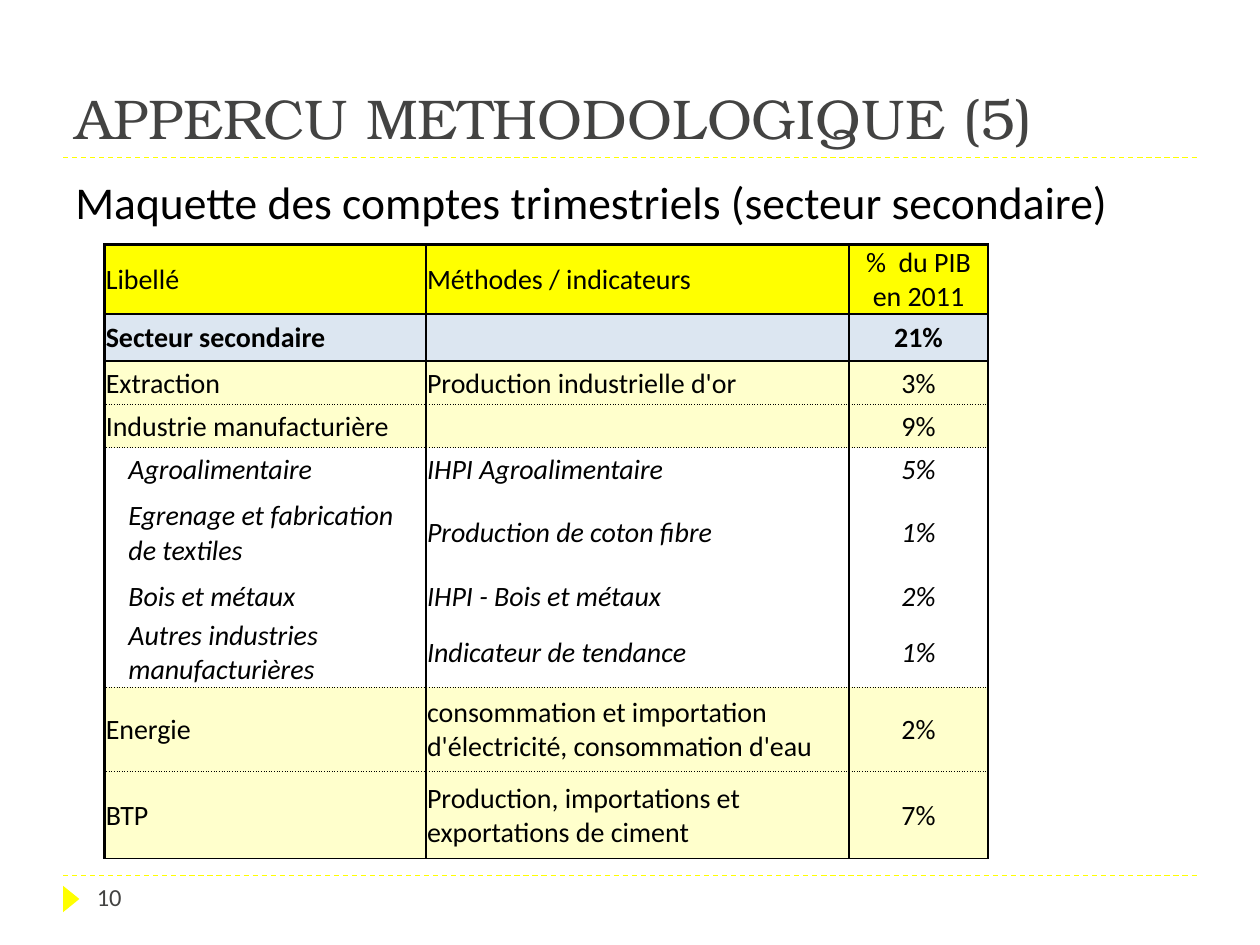
"""Build the slide on the quarterly accounts model of the secondary sector."""
from lxml import etree
from pptx import Presentation
from pptx.dml.color import RGBColor
from pptx.enum.dml import MSO_LINE
from pptx.enum.shapes import MSO_CONNECTOR, MSO_SHAPE
from pptx.enum.text import MSO_ANCHOR, MSO_AUTO_SIZE, PP_ALIGN
from pptx.oxml.ns import qn
from pptx.util import Inches, Pt

DASH = MSO_LINE.DASH
LINE = MSO_CONNECTOR.STRAIGHT
ARROW = MSO_SHAPE.ISOSCELES_TRIANGLE
TOP, MID, LOW = MSO_ANCHOR.TOP, MSO_ANCHOR.MIDDLE, MSO_ANCHOR.BOTTOM
FIXED = MSO_AUTO_SIZE.NONE
LEFT, MIDST = PP_ALIGN.LEFT, PP_ALIGN.CENTER
BLACK = RGBColor(0x00, 0x00, 0x00)
GREY = RGBColor(0x43, 0x43, 0x42)
GOLD = RGBColor(0xFF, 0xFF, 0x00)
CREAM = RGBColor(0xFF, 0xFF, 0xCC)
BLUE = RGBColor(0xDC, 0xE6, 0xF1)

deck = Presentation()
deck.slide_width, deck.slide_height = Inches(10), Inches(7.5)
COL, ROW = deck.slide_width / 100, deck.slide_height / 75
slide = deck.slides.add_slide(deck.slide_layouts[5])
shapes = slide.shapes


def write(part, text, align, **form):
    para = part.paragraphs[0]
    para.alignment = align
    run = para.add_run()
    run.text = text
    run.font.color.rgb = form.pop("color", BLACK)
    for key, value in form.items():
        setattr(run.font, key, value)


def edge(cell, spot, side, width, dash):
    line = etree.Element(qn("a:ln" + side), w=str(Pt(width)))
    if width:
        fill = etree.SubElement(line, qn("a:solidFill"))
        etree.SubElement(fill, qn("a:srgbClr"), val=str(BLACK))
        etree.SubElement(line, qn("a:prstDash"), val=dash)
    else:
        etree.SubElement(line, qn("a:noFill"))
    cell._tc.get_or_add_tcPr().insert(spot, line)


for y in (69.5, 12.5):
    rule = shapes.add_connector(LINE, int(5 * COL), int(y * ROW), int(95 * COL), int(y * ROW))
    rule.line.color.rgb = GOLD
    rule.line.width = Pt(0.75)
    rule.line.dash_style = DASH
    etree.SubElement(rule._element.spPr, qn("a:effectLst"))

mark = shapes.add_shape(ARROW, int(4.6 * COL), int(70.7 * ROW), int(2.1 * COL), int(1.3 * ROW))
mark.rotation = 90
mark.shadow.inherit = False
mark.fill.solid()
mark.fill.fore_color.rgb = GOLD
mark.line.fill.background()

title = shapes.title
lead = shapes.add_textbox(0, 0, 0, 0)
page = shapes.add_textbox(0, 0, 0, 0)
blocks = [
    (title, (5, 1.7, 90, 10.8), LOW, "APPERCU METHODOLOGIQUE (5)",
     {"size": Pt(32), "name": "TeX Gyre Bonum", "color": GREY}),
    (lead, (5, 13.3, 90, 6.8), TOP, "Maquette des comptes trimestriels (secteur secondaire)",
     {"size": Pt(26), "name": "Calibri"}),
    (page, (6.7, 69.5, 21.7, 4), TOP, "10",
     {"size": Pt(14), "name": "Calibri", "color": GREY}),
]
for shape, (x, y, w, h), anchor, text, form in blocks:
    place = {"left": x * COL, "top": y * ROW, "width": w * COL, "height": h * ROW}
    for key, value in place.items():
        setattr(shape, key, int(value))
    frame = shape.text_frame
    for key, value in {"word_wrap": True, "auto_size": FIXED, "vertical_anchor": anchor}.items():
        setattr(frame, key, value)
    write(frame, text, LEFT, **form)

PLAIN, BOLD, SUB = {}, {"bold": True}, {"italic": True}
data = [
    (5.5, GOLD, PLAIN, "Libellé", "Méthodes / indicateurs", "%  du PIB en 2011"),
    (3.7, BLUE, BOLD, "Secteur secondaire", "", "21%"),
    (3.5, CREAM, PLAIN, "Extraction", "Production industrielle d'or", "3%"),
    (3.4, CREAM, PLAIN, "Industrie manufacturière", "", "9%"),
    (3.4, None, SUB, "Agroalimentaire", "IHPI Agroalimentaire", "5%"),
    (6.7, None, SUB, "Egrenage et fabrication de textiles", "Production de coton fibre", "1%"),
    (3.4, None, SUB, "Bois et métaux", "IHPI - Bois et métaux", "2%"),
    (5.5, None, SUB, "Autres industries manufacturières", "Indicateur de tendance", "1%"),
    (6.7, CREAM, PLAIN, "Energie",
     "consommation et importation d'électricité, consommation d'eau", "2%"),
    (6.9, CREAM, PLAIN, "BTP", "Production, importations et exportations de ciment", "7%"),
]
widths = (25.5, 33.6, 11)
SOLID, DOT, BARE = (1.5, "solid"), (0.5, "dot"), (0, "solid")
rules = [SOLID] * 3 + [DOT] * 2 + [BARE] * 3 + [DOT] * 2 + [(1, "solid")]

table = shapes.add_table(
    len(data), len(widths), int(8.3 * COL), int(19.4 * ROW),
    int(sum(widths) * COL), int(sum(item[0] for item in data) * ROW)).table
table.first_row = table.horz_banding = False
for column, width in zip(table.columns, widths):
    column.width = int(width * COL)

for r, (height, fill, form, *texts) in enumerate(data):
    table.rows[r].height = int(height * ROW)
    for c, text in enumerate(texts):
        cell = table.cell(r, c)
        inset = 0.19 if form is SUB and c == 0 else 0.01
        look = {"vertical_anchor": MID, "margin_left": Inches(inset), "margin_top": Inches(0.01),
                "margin_right": Inches(0.01), "margin_bottom": 0}
        for key, value in look.items():
            setattr(cell, key, value)
        if fill is None:
            cell.fill.background()
        else:
            cell.fill.solid()
            cell.fill.fore_color.rgb = fill
        if text:
            write(cell.text_frame, text, MIDST if c == 2 else LEFT,
                  size=Pt(16), name="Calibri", **form)
        sides = zip("LRTB", (SOLID, SOLID, rules[r], rules[r + 1]))
        for spot, (side, style) in enumerate(sides):
            edge(cell, spot, side, *style)

deck.save("out.pptx")
